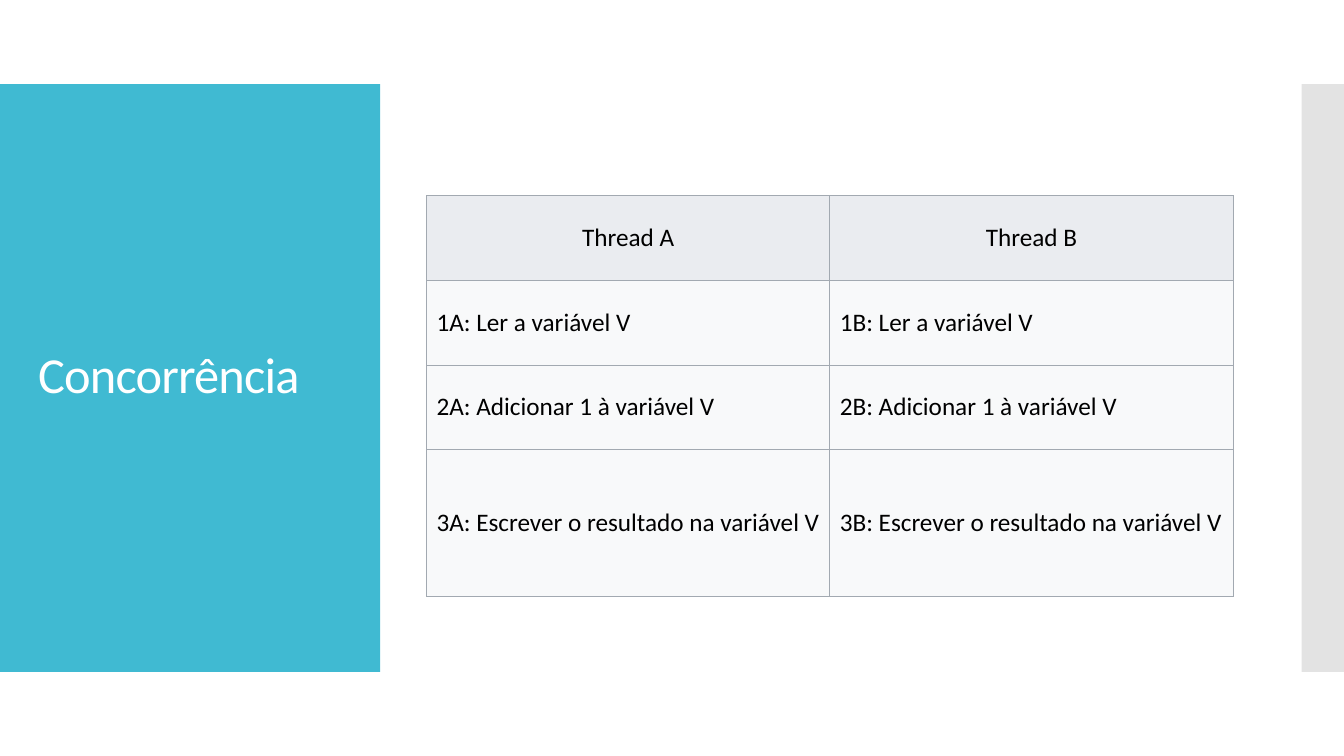
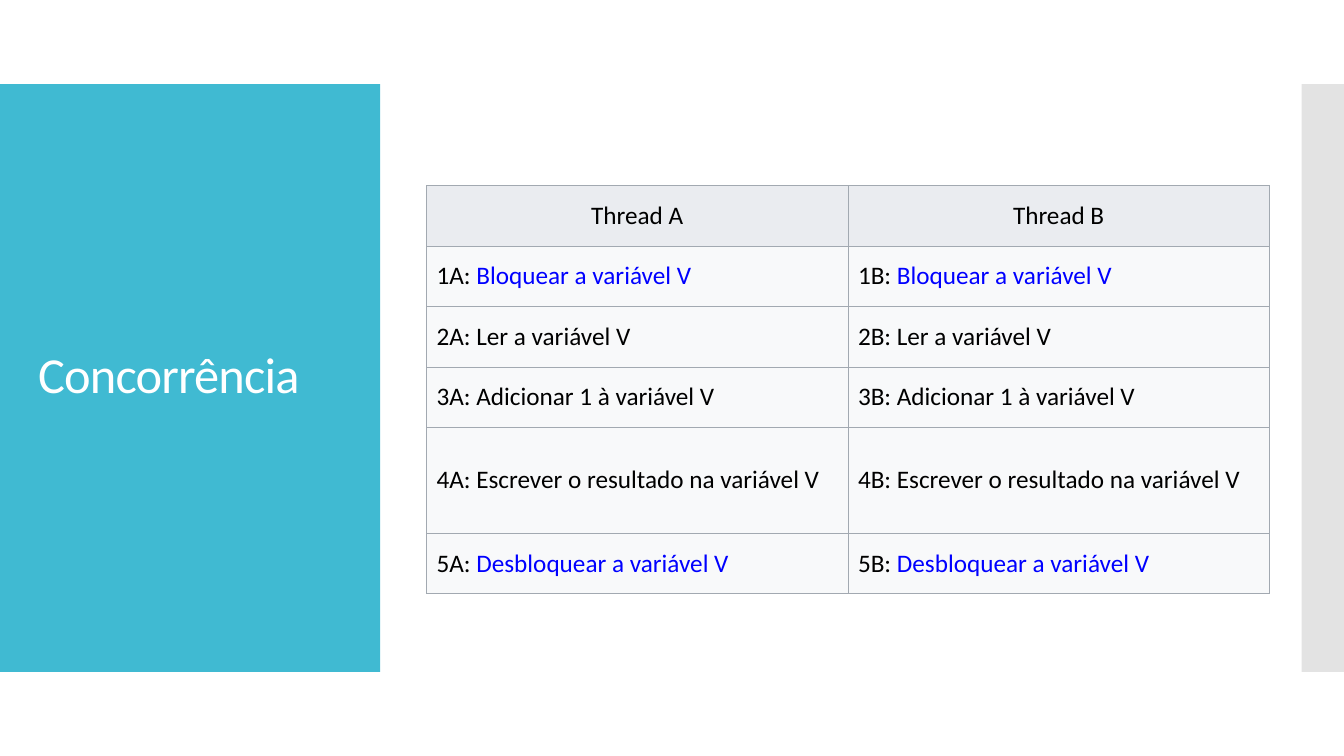
from dataclasses import dataclass

from lxml import etree
from pptx import Presentation
from pptx.dml.color import RGBColor
from pptx.enum.shapes import MSO_SHAPE
from pptx.enum.text import MSO_ANCHOR, PP_ALIGN
from pptx.oxml.ns import qn
from pptx.slide import Slide
from pptx.table import _Cell
from pptx.text.text import _Paragraph, _Run
from pptx.util import Inches, Pt

RECTANGLE = MSO_SHAPE.RECTANGLE
MIDDLE = MSO_ANCHOR.MIDDLE
LEFT, CENTER = PP_ALIGN.LEFT, PP_ALIGN.CENTER

SLIDE_WIDTH, SLIDE_HEIGHT = 13.33, 7.5
BAND_TOP, BAND_HEIGHT = SLIDE_HEIGHT / 9, SLIDE_HEIGHT * 7 / 9
TITLE_BAND_WIDTH, EDGE_BAND_WIDTH = 3.77, 0.42
TABLE_LEFT = 4.23
FONT = "Calibri"
WHITE, BLACK, BLUE = "FFFFFF", "000000", "0000FF"
TEAL, GRAY = "40BAD2", "C8C8C8"
HEADER_FILL, BODY_FILL, BORDER = "EAECF0", "F8F9FA", "A2A9B1"
BORDER_WIDTH = Pt(0.6)
THREADS = ("A", "B")


@dataclass(frozen=True)
class Band:
    left: float
    width: float
    color: str
    opacity: int = 100


@dataclass(frozen=True)
class Step:
    action: str
    color: str = BLACK
    tall: bool = False


@dataclass(frozen=True)
class ThreadTable:
    top: float
    column_width: float
    row_height: float
    tall_height: float
    steps: tuple[Step, ...]


BANDS = (
    Band(0, TITLE_BAND_WIDTH, TEAL),
    Band(SLIDE_WIDTH - EDGE_BAND_WIDTH, EDGE_BAND_WIDTH, GRAY, 50),
)
UPDATE_STEPS = (
    Step("Ler a variável V"),
    Step("Adicionar 1 à variável V"),
    Step("Escrever o resultado na variável V", tall=True),
)
LOCKED_STEPS = (
    Step("Bloquear a variável V", BLUE),
    *UPDATE_STEPS,
    Step("Desbloquear a variável V", BLUE),
)
THREAD_TABLES = (
    ThreadTable(1.94, 4, 0.84, 1.46, UPDATE_STEPS),
    ThreadTable(1.84, 4.18, 0.6, 1.05, LOCKED_STEPS),
)


def rgb(color: str) -> RGBColor:
    return RGBColor.from_string(color)


def style_run(span: _Run, size: float, color: str) -> None:
    span.font.name = FONT
    span.font.size = Pt(size)
    span.font.color.rgb = rgb(color)


def draw_band(page: Slide, band: Band) -> None:
    box = page.shapes.add_shape(
        RECTANGLE, Inches(band.left), Inches(BAND_TOP), Inches(band.width), Inches(BAND_HEIGHT)
    )
    box.shadow.inherit = False
    box.fill.solid()
    box.fill.fore_color.rgb = rgb(band.color)
    box.line.fill.background()
    if band.opacity < 100:
        color = box.fill._xPr.find(qn("a:solidFill"))[0]
        etree.SubElement(color, qn("a:alpha"), val=str(band.opacity * 1000))


def draw_title(page: Slide, title: str) -> None:
    box = page.shapes.add_textbox(Inches(0.28), Inches(1.23), Inches(3.22), Inches(5.03))
    frame = box.text_frame
    frame.word_wrap = True
    frame.vertical_anchor = MIDDLE
    frame.text = title
    para = frame.paragraphs[0]
    para.line_spacing = 0.9
    span = para.runs[0]
    style_run(span, 36, WHITE)
    span.font._element.set("spc", "-60")


def style_cell(cell: _Cell, fill: str, alignment: PP_ALIGN) -> _Paragraph:
    cell.vertical_anchor = MIDDLE
    cell.fill.solid()
    cell.fill.fore_color.rgb = rgb(fill)
    properties = cell._tc.get_or_add_tcPr()
    for index, side in enumerate(("lnL", "lnR", "lnT", "lnB")):
        line = etree.Element(qn(f"a:{side}"), w=str(int(BORDER_WIDTH)))
        solid = etree.SubElement(line, qn("a:solidFill"))
        etree.SubElement(solid, qn("a:srgbClr"), val=BORDER)
        properties.insert(index, line)
    para = cell.text_frame.paragraphs[0]
    para.alignment = alignment
    return para


def add_span(para: _Paragraph, text: str, color: str = BLACK) -> None:
    span = para.add_run()
    span.text = text
    style_run(span, 18, color)


def draw_table(page: Slide, content: ThreadTable) -> None:
    heights = [content.row_height] + [
        content.tall_height if step.tall else content.row_height for step in content.steps
    ]
    table = page.shapes.add_table(
        len(heights), len(THREADS), Inches(TABLE_LEFT), Inches(content.top),
        Inches(content.column_width * len(THREADS)), Inches(sum(heights)),
    ).table
    for row, height in zip(table.rows, heights):
        row.height = Inches(height)
    for column, thread in enumerate(THREADS):
        table.columns[column].width = Inches(content.column_width)
        add_span(style_cell(table.cell(0, column), HEADER_FILL, CENTER), f"Thread {thread}")
        for number, step in enumerate(content.steps, start=1):
            para = style_cell(table.cell(number, column), BODY_FILL, LEFT)
            label = f"{number}{thread}: "
            if step.color == BLACK:
                add_span(para, label + step.action)
            else:
                add_span(para, label)
                add_span(para, step.action, step.color)


def main() -> None:
    deck = Presentation()
    deck.slide_width = Inches(SLIDE_WIDTH)
    deck.slide_height = Inches(SLIDE_HEIGHT)
    for content in THREAD_TABLES:
        page = deck.slides.add_slide(deck.slide_layouts[6])
        for band in BANDS:
            draw_band(page, band)
        draw_title(page, "Concorrência")
        draw_table(page, content)
    deck.save("out.pptx")


if __name__ == "__main__":
    main()
